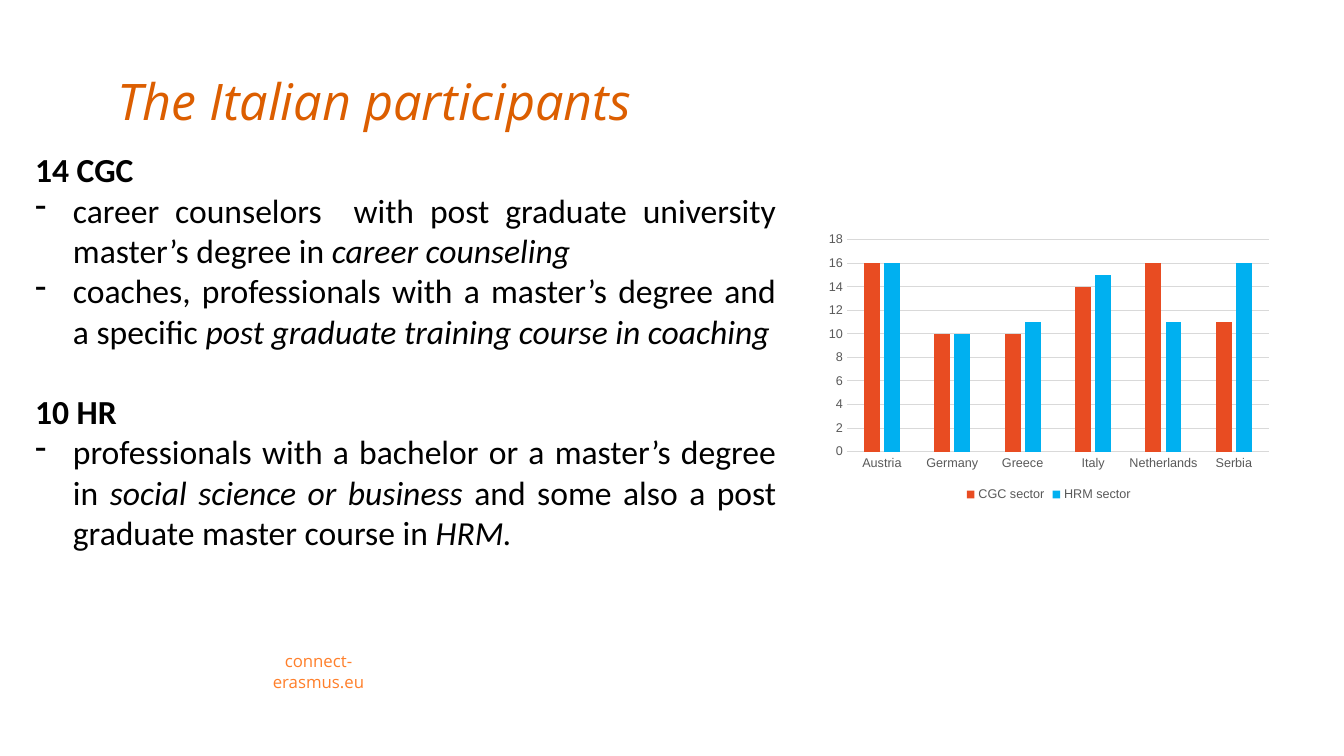
from pptx import Presentation
from pptx.chart.data import CategoryChartData
from pptx.dml.color import RGBColor
from pptx.enum import chart as charts, text
from pptx.oxml import xmlchemy
from pptx.util import Pt
from lxml import etree


def color(hex_string):
    return RGBColor.from_string(hex_string)


def add_text_box(left, top, width, height, anchor):
    frame = slide.shapes.add_textbox(Pt(left), Pt(top), Pt(width), Pt(height)).text_frame
    frame.word_wrap = True
    frame.vertical_anchor = anchor
    return frame


presentation = Presentation()
presentation.slide_width, presentation.slide_height = Pt(960), Pt(540)
slide = presentation.slides.add_slide(presentation.slide_layouts[6])

# Title
title = add_text_box(77, 43.2, 414, 54, text.MSO_ANCHOR.BOTTOM).paragraphs[0]
title.text = "The Italian participants"
title.line_spacing = 0.9
title.font.name, title.font.size, title.font.italic = "Open Sans", Pt(36), True
title.font.color.rgb = color("DC5E00")

# Participant groups: plain and italic runs alternate in each bullet
groups = [
    ("14 CGC", [
        ["career counselors  with post graduate university master’s degree in ",
         "career counseling"],
        ["coaches, professionals with a master’s degree and a specific ",
         "post graduate training course in coaching"],
    ]),
    ("10 HR", [
        ["professionals with a bachelor or a master’s degree in ",
         "social science or business ",
         "and some also a post graduate master course in ", "HRM."],
    ]),
]
body = add_text_box(18, 103, 543.6, 333.4, text.MSO_ANCHOR.TOP)
for group_index, (heading, bullets) in enumerate(groups):
    for index, runs in enumerate([[heading]] + bullets):
        is_heading = index == 0
        is_first = group_index == 0 and is_heading
        paragraph = body.paragraphs[0] if is_first else body.add_paragraph()
        paragraph.alignment = text.PP_ALIGN.JUSTIFY
        paragraph.line_spacing = Pt(28.8)
        if is_heading and not is_first:
            paragraph.space_before = Pt(28.8)
        if not is_heading:
            properties = paragraph._p.get_or_add_pPr()
            properties.set("marL", str(Pt(27)))
            properties.set("indent", str(-Pt(27)))
            bullet = etree.SubElement(properties, xmlchemy.qn("a:buChar"))
            bullet.set("char", "-")
        paragraph.font.name, paragraph.font.size = "Calibri", Pt(24)
        paragraph.font.bold = is_heading
        paragraph.font.color.rgb = color("000000")
        for run_index, words in enumerate(runs):
            run = paragraph.add_run()
            run.text = words
            if run_index % 2:
                run.font.italic = True

# Web address
address = add_text_box(164.2, 468.7, 126.7, 21.6, text.MSO_ANCHOR.MIDDLE).paragraphs[0]
address.text = "connect-erasmus.eu"
address.alignment = text.PP_ALIGN.CENTER
address.font.name, address.font.size = "Open Sans", Pt(12)
address.font.color.rgb = color("FF7F2A")

# Participants per country
data = CategoryChartData()
data.categories = ["Austria", "Germany", "Greece", "Italy", "Netherlands", "Serbia"]
data.add_series("CGC sector", [16, 10, 10, 14, 16, 11])
data.add_series("HRM sector", [16, 10, 11, 15, 11, 16])
chart = slide.shapes.add_chart(
    charts.XL_CHART_TYPE.COLUMN_CLUSTERED,
    Pt(585.4), Pt(162), Pt(327.6), Pt(199.4), data).chart
chart.has_title = False
chart.font.name, chart.font.size = "Arial", Pt(9)
chart.font.color.rgb = color("595959")
chart.has_legend = True
chart.legend.position = charts.XL_LEGEND_POSITION.BOTTOM
chart.legend.include_in_layout = False

plot = chart.plots[0]
plot.gap_width, plot.overlap, plot.vary_by_categories = 219, -27, False
for series, fill in zip(plot.series, ["E84C22", "00B0F0"]):
    series.format.fill.solid()
    series.format.fill.fore_color.rgb = color(fill)

for axis in (chart.category_axis, chart.value_axis):
    axis.major_tick_mark = axis.minor_tick_mark = charts.XL_TICK_MARK.NONE
chart.value_axis.minimum_scale, chart.value_axis.maximum_scale = 0, 18
chart.value_axis.major_unit = 2
chart.value_axis.format.line.fill.background()
for line in (chart.category_axis.format.line, chart.value_axis.major_gridlines.format.line):
    line.width = Pt(0.75)
    line.color.rgb = color("D9D9D9")

presentation.save("out.pptx")
